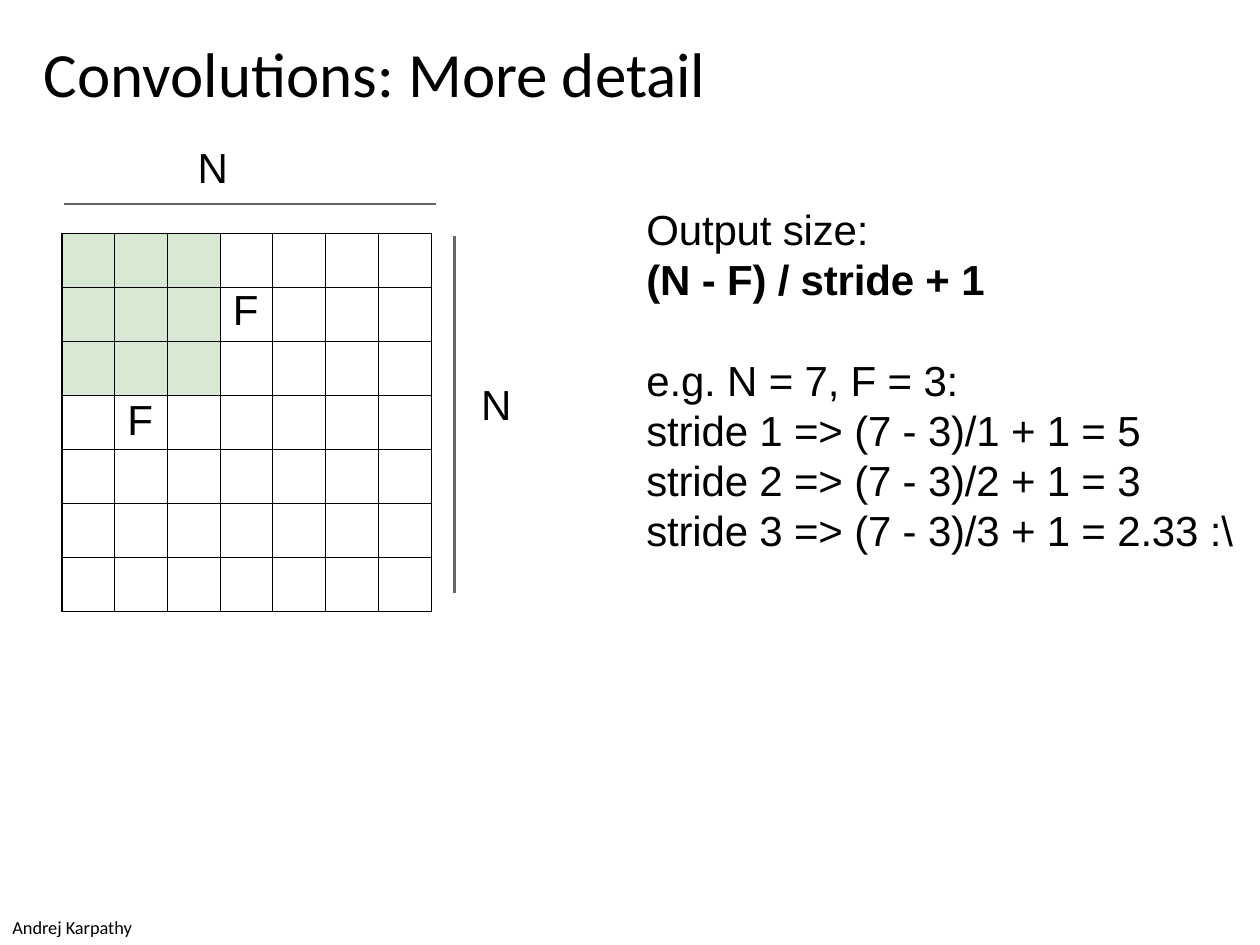
import pptx
import pptx.dml.color
import pptx.enum.shapes
import pptx.enum.text
import pptx.oxml
import pptx.oxml.ns
import pptx.util

Pt = pptx.util.Pt
RGB = pptx.dml.color.RGBColor.from_string
COLORS = {"text": "000000", "rule": "666666", "filter": "D8E9D3", "border": "000000"}
NS = pptx.oxml.ns.nsdecls("a")


def write(tf, lines, size=24, font="Arial", bold_lines=(), line_pt=None,
          spacing=None, margins=(0, 0, 0, 0), wrap=True):
    """Fill a text frame with one paragraph per line."""
    tf.word_wrap = wrap
    tf.margin_left, tf.margin_top, tf.margin_right, tf.margin_bottom = map(Pt, margins)
    for i, line in enumerate(lines):
        p = tf.paragraphs[0] if i == 0 else tf.add_paragraph()
        if line_pt:
            p.line_spacing = Pt(line_pt)
        r = p.add_run()
        r.text = line
        r.font.size, r.font.name = Pt(size), font
        r.font.bold = i in bold_lines
        r.font.color.rgb = RGB(COLORS["text"])
        if spacing:
            r.font._element.set("spc", str(spacing))


prs = pptx.Presentation()
prs.slide_width, prs.slide_height = Pt(720), Pt(540)
s = prs.slides.add_slide(prs.slide_layouts[6])

# Input grid with the filter in its top left corner
N, F = 7, 3
frame = s.shapes.add_table(N, N, Pt(35.4), Pt(133.4), Pt(211), Pt(216))
table = frame.table
table.first_row = table.horz_banding = False
for col in table.columns:
    col.width = Pt(30.14)
for row in table.rows:
    row.height = Pt(30.86)

for i in range(N):
    for j in range(N):
        cell = table.cell(i, j)
        tcPr = cell._tc.get_or_add_tcPr()
        for side in ("lnL", "lnR", "lnT", "lnB"):
            tcPr.append(pptx.oxml.parse_xml(
                f'<a:{side} {NS} w="9525"><a:solidFill><a:srgbClr val="{COLORS["border"]}"/>'
                f'</a:solidFill></a:{side}>'))
        if i < F and j < F:
            cell.fill.solid()
            cell.fill.fore_color.rgb = RGB(COLORS["filter"])
        else:
            cell.fill.background()

for i, j, line_pt in [(1, F, None), (F, 1, 28.2)]:
    cell = table.cell(i, j)
    cell.margin_left, cell.margin_top = Pt(7.2), Pt(0)
    cell.margin_right = cell.margin_bottom = Pt(0)
    write(cell.text_frame, ["F"], line_pt=line_pt, margins=(7.2, 0, 0, 0))

# Rules that measure the grid
for x1, y1, x2, y2 in [(36.7, 116.6, 249.1, 116.6), (259.9, 134.6, 259.9, 339.1)]:
    rule = s.shapes.add_connector(pptx.enum.shapes.MSO_CONNECTOR.STRAIGHT,
                                  Pt(x1), Pt(y1), Pt(x2), Pt(y2))
    rule.line.color.rgb = RGB(COLORS["rule"])
    rule.line.width = Pt(1.5)
    rule._element.spPr.append(pptx.oxml.parse_xml(f"<a:effectLst {NS}/>"))

# Text: left, top, width, height, lines, format
body = dict(line_pt=28.6, spacing=-10, wrap=False)
inset = (7.2, 3.6, 7.2, 3.6)
texts = [
    (113, 80.6, 20, 29, ["N"], dict(spacing=-10)),
    (275, 216, 20, 29, ["N"], dict(spacing=-10)),
    (369.4, 116.7, 340, 58, ["Output size:", "(N - F) / stride + 1"],
     dict(body, bold_lines=(1,))),
    (369.4, 202.8, 340, 117,
     ["e.g. N = 7, F = 3:", "stride 1 => (7 - 3)/1 + 1 = 5",
      "stride 2 => (7 - 3)/2 + 1 = 3", "stride 3 => (7 - 3)/3 + 1 = 2.33 :\\"], body),
    (18, 16, 684, 44, ["Convolutions: More detail"],
     dict(size=36, font="Calibri", margins=inset)),
    (0, 520, 84, 20, ["Andrej Karpathy"],
     dict(size=10.5, font="Calibri", margins=inset, wrap=False)),
]
for x, y, w, h, lines, fmt in texts:
    sp = s.shapes.add_textbox(Pt(x), Pt(y), Pt(w), Pt(h))
    sp.text_frame.vertical_anchor = pptx.enum.text.MSO_ANCHOR.TOP
    write(sp.text_frame, lines, **fmt)

prs.save("out.pptx")
